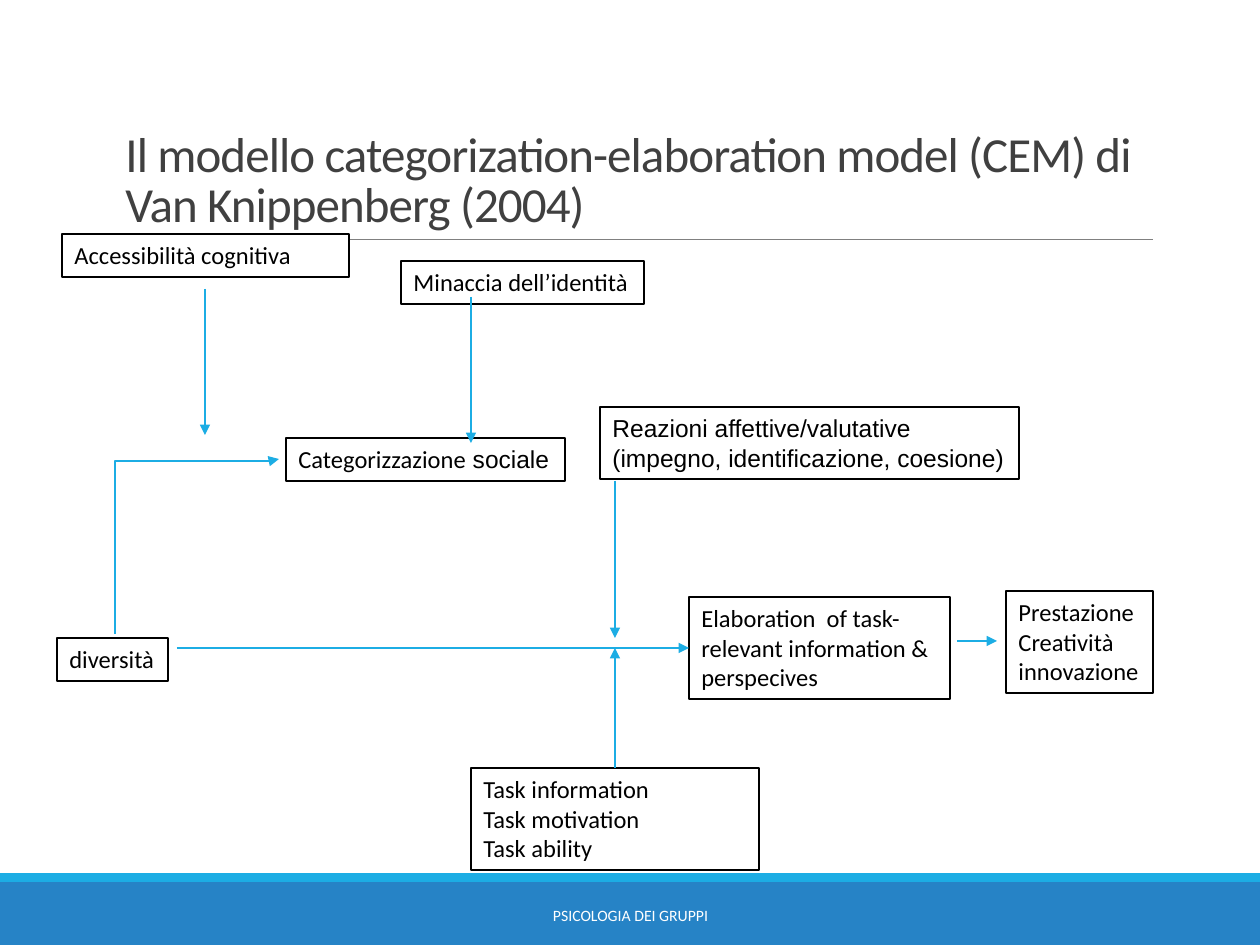
from dataclasses import dataclass
from typing import Optional

from lxml import etree
from pptx import Presentation
from pptx.dml.color import RGBColor
from pptx.enum.shapes import MSO_CONNECTOR, MSO_SHAPE
from pptx.enum.text import MSO_ANCHOR, MSO_AUTO_SIZE, PP_ALIGN
from pptx.oxml.ns import qn
from pptx.util import Emu, Pt

STRAIGHT, ELBOW = MSO_CONNECTOR.STRAIGHT, MSO_CONNECTOR.ELBOW
TOP, MIDDLE, BOTTOM = MSO_ANCHOR.TOP, MSO_ANCHOR.MIDDLE, MSO_ANCHOR.BOTTOM
LEFT, CENTER = PP_ALIGN.LEFT, PP_ALIGN.CENTER
FIT_SHAPE, NO_FIT = MSO_AUTO_SIZE.SHAPE_TO_FIT_TEXT, MSO_AUTO_SIZE.NONE
SIDE_TOP, SIDE_LEFT = 0, 1
PX_PER_INCH = 126
SLIDE_W, SLIDE_H = 1260, 945


@dataclass(frozen=True)
class Theme:
    font: str = "Calibri"
    alt_font: str = "Arial"
    title_size: float = 28
    box_size: float = 14
    footer_size: float = 9
    heavy: float = 1.25
    thin: float = 0.75
    arrow_width: float = 1
    rule_width: float = 0.5
    title: str = "404040"
    ink: str = "000000"
    paper: str = "FFFFFF"
    band: str = "2683C6"
    accent: str = "1CADE4"
    rule: str = "808080"


THEME = Theme()


@dataclass(frozen=True)
class Run:
    text: str
    font: str = THEME.font


@dataclass(frozen=True)
class Concept:
    left: int
    top: int
    width: int
    height: int
    lines: tuple[tuple[Run, ...], ...]
    wrap: bool = False
    filled: bool = True


@dataclass(frozen=True)
class Arrow:
    start: tuple[int, int]
    end: tuple[int, int]
    source: Optional[str] = None  # concept joined at its top
    target: Optional[str] = None  # concept joined at its left side


def plain(*lines: str, font: str = THEME.font) -> tuple[tuple[Run, ...], ...]:
    """One single-run paragraph for each line."""
    return tuple((Run(line, font),) for line in lines)


CONCEPTS = {
    "diversity": Concept(57, 638, 111, 43, plain("diversità")),
    "categorization": Concept(
        286, 438, 279, 43,
        ((Run("Categorizzazione"), Run(" sociale", THEME.alt_font)),), filled=False),
    "threat": Concept(401, 261, 243, 43, plain("Minaccia dell’identità")),
    "outcomes": Concept(1006, 591, 147, 102,
                        plain("Prestazione", "Creatività", "innovazione")),
    "task": Concept(471, 768, 288, 102,
                    plain("Task information", "Task motivation", "Task ability"), wrap=True),
    "reactions": Concept(
        600, 407, 419, 72,
        plain("Reazioni affettive/valutative", "(impegno, identificazione, coesione)",
              font=THEME.alt_font), filled=False),
    "accessibility": Concept(62, 234, 287, 43, plain("Accessibilità cognitiva"), wrap=True),
    "elaboration": Concept(
        689, 597, 261, 102,
        plain("Elaboration  of task-relevant information & perspecives"), wrap=True),
}

ARROWS = (
    Arrow((177, 648), (689, 648), target="elaboration"),
    Arrow((957, 641), (997, 641)),
    Arrow((471, 297), (471, 443)),
    Arrow((205, 289), (205, 435)),
    Arrow((615, 481), (615, 638)),
    Arrow((615, 768), (615, 648), source="task"),
)


def px(value: float) -> Emu:
    return Emu(round(value * 914400 / PX_PER_INCH))


def rgb(value: str) -> RGBColor:
    return RGBColor.from_string(value)


def add_text(slide, lines, left, top, width, height, *, size, color=THEME.ink,
             align=LEFT, anchor=TOP, wrap=True, fit=NO_FIT, line_spacing=None, tracking=None):
    box = slide.shapes.add_textbox(px(left), px(top), px(width), px(height))
    frame = box.text_frame
    frame.word_wrap = wrap
    frame.auto_size = fit
    frame.vertical_anchor = anchor
    for index, runs in enumerate(lines):
        paragraph = frame.add_paragraph() if index else frame.paragraphs[0]
        paragraph.alignment = align
        paragraph.line_spacing = line_spacing
        for part in runs:
            run = paragraph.add_run()
            run.text = part.text
            run.font.name = part.font
            run.font.size = Pt(size)
            run.font.color.rgb = rgb(color)
            if tracking is not None:
                run.font._element.set("spc", str(tracking))
    return box


def add_band(slide, top: int, height: int, color: str) -> None:
    band = slide.shapes.add_shape(MSO_SHAPE.RECTANGLE, 0, px(top), px(SLIDE_W), px(height))
    band.shadow.inherit = False
    band.fill.solid()
    band.fill.fore_color.rgb = rgb(color)
    band.line.fill.background()


def add_line(slide, start, end, color: str, width: float, kind=STRAIGHT, head=False):
    line = slide.shapes.add_connector(kind, *map(px, (*start, *end)))
    line.line.color.rgb = rgb(color)
    line.line.width = Pt(width)
    if head:
        etree.SubElement(line.line._get_or_add_ln(), qn("a:tailEnd"), type="triangle")
    etree.SubElement(line._element.spPr, qn("a:effectLst"))
    return line


def add_rising_elbow(slide, start: tuple[int, int], end: tuple[int, int]) -> None:
    """Arrow that climbs from start, then runs right to end: an elbow turned by 270°."""
    run, rise = end[0] - start[0], start[1] - end[1]
    mid_x, mid_y = (start[0] + end[0]) / 2, (start[1] + end[1]) / 2
    elbow = add_line(slide, (mid_x - rise / 2, mid_y - run / 2),
                     (mid_x + rise / 2, mid_y + run / 2),
                     THEME.accent, THEME.arrow_width, ELBOW, head=True)
    properties = elbow._element.spPr
    properties.find(qn("a:xfrm")).set("rot", str(270 * 60000))
    adjustments = properties.find(qn("a:prstGeom")).find(qn("a:avLst"))
    etree.SubElement(adjustments, qn("a:gd"), name="adj1", fmla="val 99000")


def add_concept(slide, concept: Concept):
    box = add_text(slide, concept.lines, concept.left, concept.top, concept.width,
                   concept.height, size=THEME.box_size, wrap=concept.wrap, fit=FIT_SHAPE)
    if concept.filled:
        box.fill.solid()
        box.fill.fore_color.rgb = rgb(THEME.paper)
    box.line.color.rgb = rgb(THEME.ink)
    box.line.width = Pt(THEME.heavy if concept.filled else THEME.thin)
    return box


def add_arrow(slide, arrow: Arrow, boxes: dict) -> None:
    line = add_line(slide, arrow.start, arrow.end, THEME.accent, THEME.arrow_width, head=True)
    if arrow.source:
        line.begin_connect(boxes[arrow.source], SIDE_TOP)
    if arrow.target:
        line.end_connect(boxes[arrow.target], SIDE_LEFT)


def main() -> None:
    deck = Presentation()
    deck.slide_width, deck.slide_height = px(SLIDE_W), px(SLIDE_H)
    slide = deck.slides.add_slide(deck.slide_layouts[6])

    add_band(slide, 882, 63, THEME.band)
    add_band(slide, 873, 9, THEME.accent)
    add_line(slide, (123, 239), (1153, 239), THEME.rule, THEME.rule_width)
    add_text(slide, plain("Il modello categorization-elaboration model (CEM) di "
                          "Van Knippenberg (2004)"),
             113, 39, 1040, 200, size=THEME.title_size, color=THEME.title,
             anchor=BOTTOM, line_spacing=0.85, tracking=-50)
    add_text(slide, plain("PSICOLOGIA DEI GRUPPI"), 381, 890, 499, 50,
             size=THEME.footer_size, color=THEME.paper, align=CENTER, anchor=MIDDLE)

    boxes = {key: add_concept(slide, concept) for key, concept in CONCEPTS.items()}
    for arrow in ARROWS:
        add_arrow(slide, arrow, boxes)
    add_rising_elbow(slide, (115, 634), (279, 459))
    deck.save("out.pptx")


if __name__ == "__main__":
    main()
